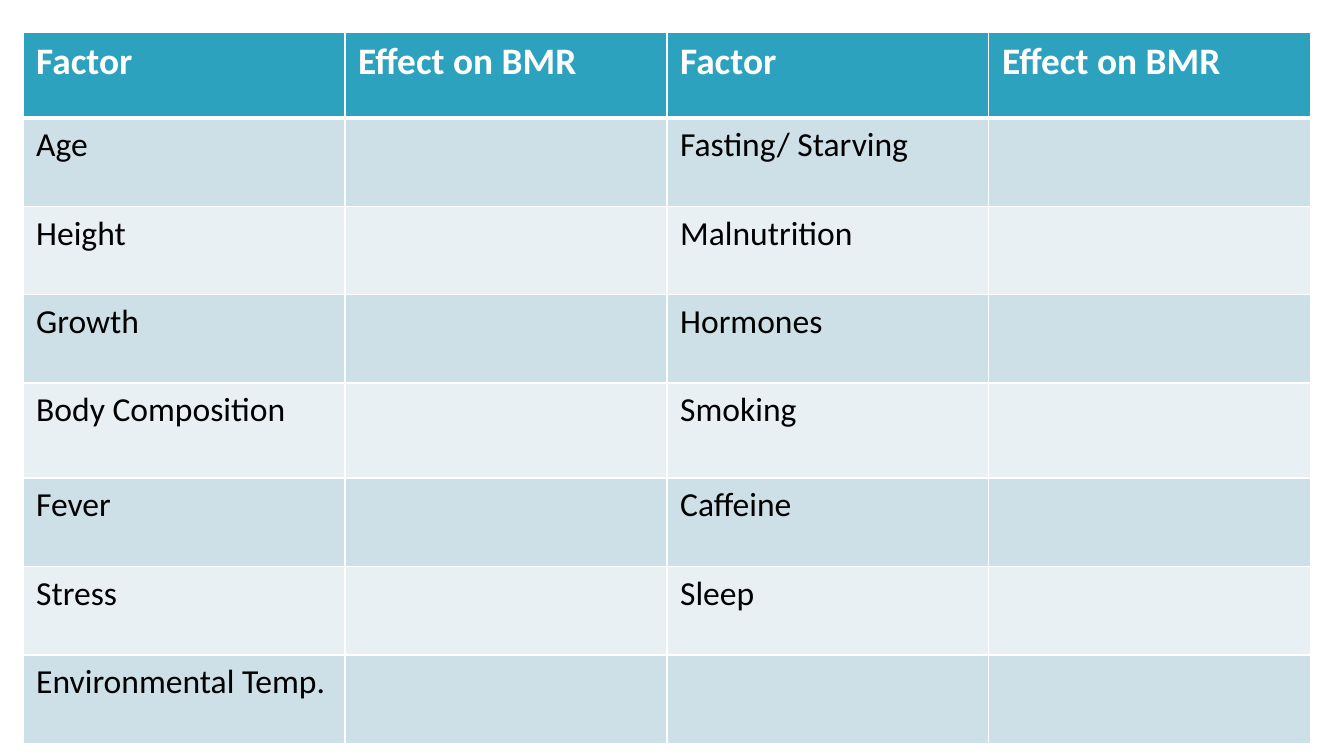
from dataclasses import dataclass

from lxml import etree
from pptx import Presentation
from pptx import util as u
from pptx.dml.color import RGBColor
from pptx.oxml import ns


@dataclass(frozen=True)
class Theme:
    """Colours, font and type sizes of the slide."""
    font: str = "Calibri"
    heading_fill: str = "2DA2BF"
    bands: tuple = ("CDE0E8", "E8F0F4")
    light: str = "FFFFFF"
    dark: str = "000000"
    heading_size: int = 20
    body_size: int = 18
    rule: int = 1
    heading_rule: int = 3


THEME = Theme()
HEADINGS = ("Factor", "Effect on BMR") * 2
FACTORS = (
    ("Age", "Fasting/ Starving"),
    ("Height", "Malnutrition"),
    ("Growth", "Hormones"),
    ("Body Composition", "Smoking"),
    ("Fever", "Caffeine"),
    ("Stress", "Sleep"),
    ("Environmental Temp.", ""),
)
ROW_HEIGHTS = (1.63, 1.67, 1.67, 1.67, 1.8, 1.67, 1.67, 1.67)


def write(frame, words, *, size, color, bold=False):
    """Put formatted words in the first paragraph of a text frame."""
    paragraph = frame.paragraphs[0]
    paragraph.font.size = u.Pt(size)
    if words:
        run = paragraph.add_run()
        run.text = words
        run.font.name = THEME.font
        run.font.size = u.Pt(size)
        run.font.bold = bold
        run.font.color.rgb = RGBColor.from_string(color)


def rule_cell(cell, widths):
    """Draw the four borders of a cell, with widths keyed by side."""
    properties = cell._tc.get_or_add_tcPr()
    for index, (side, width) in enumerate(widths.items()):
        border = etree.Element(ns.qn(f"a:ln{side}"), w=str(u.Pt(width)))
        fill = etree.SubElement(border, ns.qn("a:solidFill"))
        etree.SubElement(fill, ns.qn("a:srgbClr"), val=THEME.light)
        properties.insert(index, border)


def factor_table(slide, left, top, width, height):
    """Place the table of factors and their effect on BMR in a box."""
    rows = [HEADINGS] + [(first, "", second, "") for first, second in FACTORS]
    table = slide.shapes.add_table(
        len(rows), len(HEADINGS), left, top, width, height).table
    for column in table.columns:
        column.width = width // len(HEADINGS)
    for row_index, words_in_row in enumerate(rows):
        heading = row_index == 0
        table.rows[row_index].height = int(
            height * ROW_HEIGHTS[row_index] / sum(ROW_HEIGHTS))
        fill = THEME.heading_fill if heading else THEME.bands[(row_index - 1) % 2]
        rules = dict.fromkeys("LRTB", THEME.rule)
        if heading:
            rules["B"] = THEME.heading_rule
        elif row_index == 1:
            rules["T"] = THEME.heading_rule
        for column_index, words in enumerate(words_in_row):
            cell = table.cell(row_index, column_index)
            cell.fill.solid()
            cell.fill.fore_color.rgb = RGBColor.from_string(fill)
            rule_cell(cell, rules)
            write(cell.text_frame, words, bold=heading,
                  size=THEME.heading_size if heading else THEME.body_size,
                  color=THEME.light if heading else THEME.dark)


def main():
    """Build the slide and save it."""
    deck = Presentation()
    deck.slide_width, deck.slide_height = u.Cm(25.4), u.Cm(14.29)
    slide = deck.slides.add_slide(deck.slide_layouts[6])
    factor_table(slide, u.Cm(0.43), u.Cm(0.6), u.Cm(24.34), u.Cm(13.45))
    deck.save("out.pptx")


if __name__ == "__main__":
    main()
